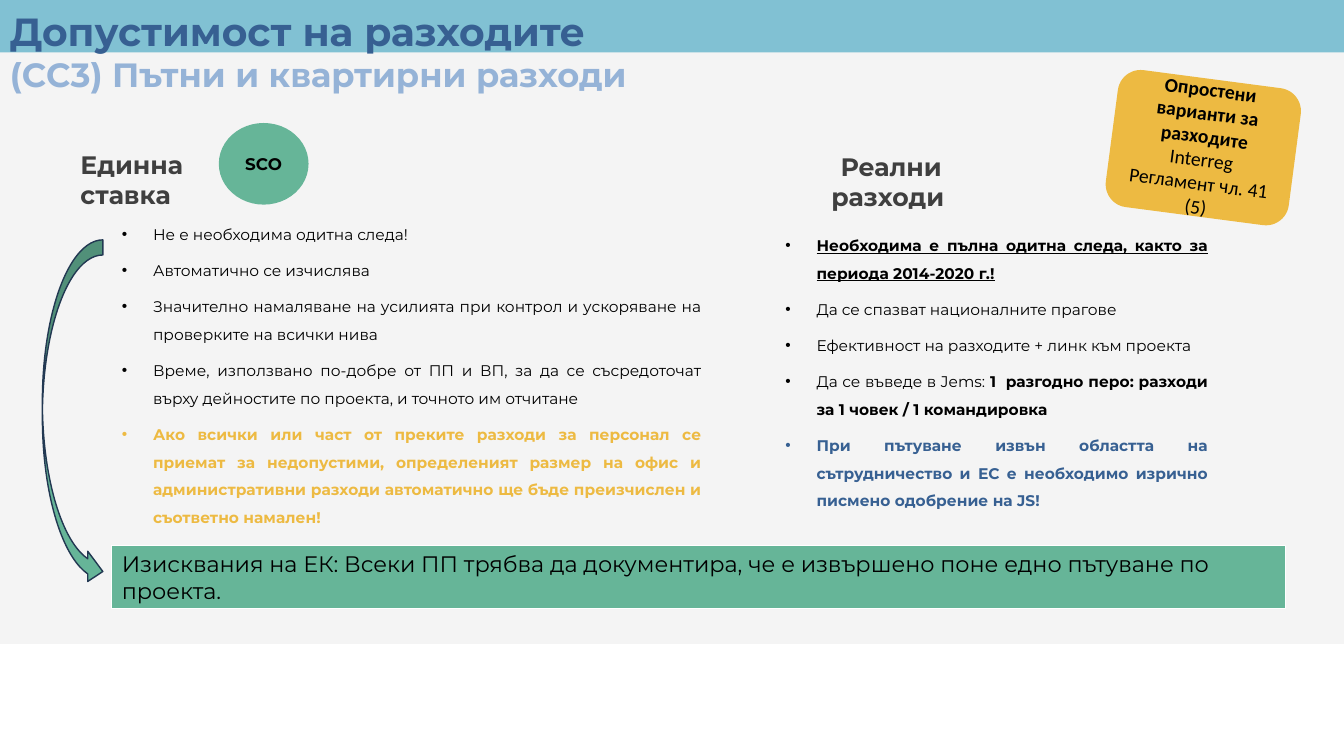
from lxml import etree
from pptx import Presentation, util as u
from pptx.dml.color import RGBColor
from pptx.enum import shapes, text
from pptx.oxml.ns import qn

PX = 9144  # 100 px to the inch
C = {"back": "F4F4F4", "band": "81C1D3", "white": "FFFFFF", "black": "000000",
     "green": "66B598", "yellow": "EDBA42", "blue": "376092", "pale": "95B3D7",
     "grey": "3F3F3F", "navy": "223852"}
SHAPE = shapes.MSO_SHAPE
ALIGN = text.PP_ALIGN
FONT = "Montserrat"

FLAT_RATE = [
    ("Не е необходима одитна следа!", {}),
    ("Автоматично се изчислява", {}),
    ("Значително намаляване на усилията при контрол и ускоряване на проверките на всички нива", {}),
    ("Време, използвано по-добре от ПП и ВП, за да се съсредоточат върху дейностите по проекта, "
     "и точното им отчитане", {}),
    ("Ако всички или част от преките разходи за персонал се приемат за недопустими, определеният "
     "размер на офис и административни разходи автоматично ще бъде преизчислен и съответно намален!",
     {"color": "yellow", "bold": True}),
]
REAL_COSTS = [
    ("Необходима е пълна одитна следа, както за периода 2014-2020 г.!",
     {"bold": True, "underline": True}),
    ("Да се спазват националните прагове", {}),
    ("Ефективност на разходите + линк към проекта", {}),
    ("Да се въведе в Jems: ", {}),
    ("При пътуване извън областта на сътрудничество и ЕС е необходимо изрично писмено одобрение на JS!",
     {"color": "blue", "bold": True}),
]
TRIP_ITEM = "1  разгодно перо: разходи за 1 човек / 1 командировка"


def rgb(name):
    return RGBColor.from_string(C[name])


def style(r, size, color="black", bold=False, underline=None, font=FONT):
    f = r.font
    f.name, f.size, f.bold, f.underline = font, u.Pt(size), bold, underline
    f.color.rgb = rgb(color)


def add_run(p, content, size, **look):
    r = p.add_run()
    r.text = content
    style(r, size, **look)


def add_shape(s, kind, box, fill, line=None, width=0, rotation=0):
    sp = s.shapes.add_shape(kind, *(v * PX for v in box))
    sp.shadow.inherit = False
    sp.fill.solid()
    sp.fill.fore_color.rgb = rgb(fill)
    if line:
        sp.line.color.rgb = rgb(line)
        sp.line.width = u.Pt(width)
    else:
        sp.line.fill.background()
    sp.rotation = rotation
    return sp


def add_box(s, box):
    tf = s.shapes.add_textbox(*(v * PX for v in box)).text_frame
    tf.word_wrap = True
    tf.auto_size = text.MSO_AUTO_SIZE.SHAPE_TO_FIT_TEXT
    return tf


def write(p, content, size, align=ALIGN.LEFT, **look):
    p.text = content
    p.alignment = align
    style(p.runs[0], size, **look)


def add_bullet(p, color):
    pPr = p._p.get_or_add_pPr()
    pPr.set("marL", str(31 * PX))
    pPr.set("indent", str(-31 * PX))
    clr = etree.SubElement(pPr, qn("a:buClr"))
    etree.SubElement(clr, qn("a:srgbClr"), val=C[color])
    etree.SubElement(pPr, qn("a:buFont"), typeface="Arial")
    etree.SubElement(pPr, qn("a:buChar"), char="•")


def add_bullets(s, box, items):
    tf = add_box(s, box)
    for i, (content, look) in enumerate(items):
        p = tf.add_paragraph() if i else tf.paragraphs[0]
        add_bullet(p, look.get("color", "black"))
        write(p, content, 11, ALIGN.JUSTIFY, **look)
        p.line_spacing = 1.5
        p.space_before = u.Pt(6 if i else 0)
    return tf


def add_background(s):
    s.background.fill.solid()
    s.background.fill.fore_color.rgb = rgb("back")
    for top in (0, 26):
        add_shape(s, SHAPE.RECTANGLE, (0, top, 1333, 26), "band")
    add_shape(s, SHAPE.RECTANGLE, (0, 639, 1333, 111), "white")


def add_title(s):
    tf = add_box(s, (0, 2, 1053, 96))
    write(tf.paragraphs[0], "Допустимост на разходите", 28, color="blue", bold=True)
    write(tf.add_paragraph(), "(CC3) Пътни и квартирни разходи", 24, color="pale", bold=True)


def add_heading(s, box, content, align):
    write(add_box(s, box).paragraphs[0], content, 18, align, color="grey", bold=True)


def add_requirement(s):
    sp = add_shape(s, SHAPE.RECTANGLE, (111, 541, 1164, 63), "green", "white")
    tf = sp.text_frame
    tf.vertical_anchor = text.MSO_ANCHOR.TOP
    tf.auto_size = text.MSO_AUTO_SIZE.SHAPE_TO_FIT_TEXT
    write(tf.paragraphs[0], "Изисквания на ЕК: Всеки ПП трябва да документира, че е извършено "
          "поне едно пътуване по проекта.", 16)


def add_sticker(s):
    sp = add_shape(s, SHAPE.ROUNDED_RECTANGLE, (1102, 78, 183, 137), "yellow", rotation=7.5)
    p = sp.text_frame.paragraphs[0]
    write(p, "Опростени варианти за разходите ", 14, ALIGN.CENTER, bold=True, font="Calibri")
    add_run(p, "Interreg Регламент чл. 41 (5)", 14, font="Calibri")


def main():
    prs = Presentation()
    prs.slide_width, prs.slide_height = 1333 * PX, 750 * PX
    s = prs.slides.add_slide(prs.slide_layouts[6])
    add_background(s)
    add_bullets(s, (111, 209, 595, 353), FLAT_RATE)
    add_heading(s, (70, 143, 140, 70), "Единна ставка", ALIGN.LEFT)
    add_title(s)
    add_requirement(s)
    add_sticker(s)
    sco = add_shape(s, SHAPE.OVAL, (217, 122, 89, 81), "green")
    write(sco.text_frame.paragraphs[0], "SCO", 12, ALIGN.CENTER, bold=True)
    add_heading(s, (780, 145, 208, 70), "Реални разходи ", ALIGN.CENTER)
    real = add_bullets(s, (769, 220, 439, 371), REAL_COSTS)
    add_run(real.paragraphs[3], TRIP_ITEM, 11, bold=True)
    add_shape(s, SHAPE.CURVED_UP_ARROW, (-100, 380, 344, 60), "green", "navy", 1, rotation=90)
    prs.save("out.pptx")


if __name__ == "__main__":
    main()
